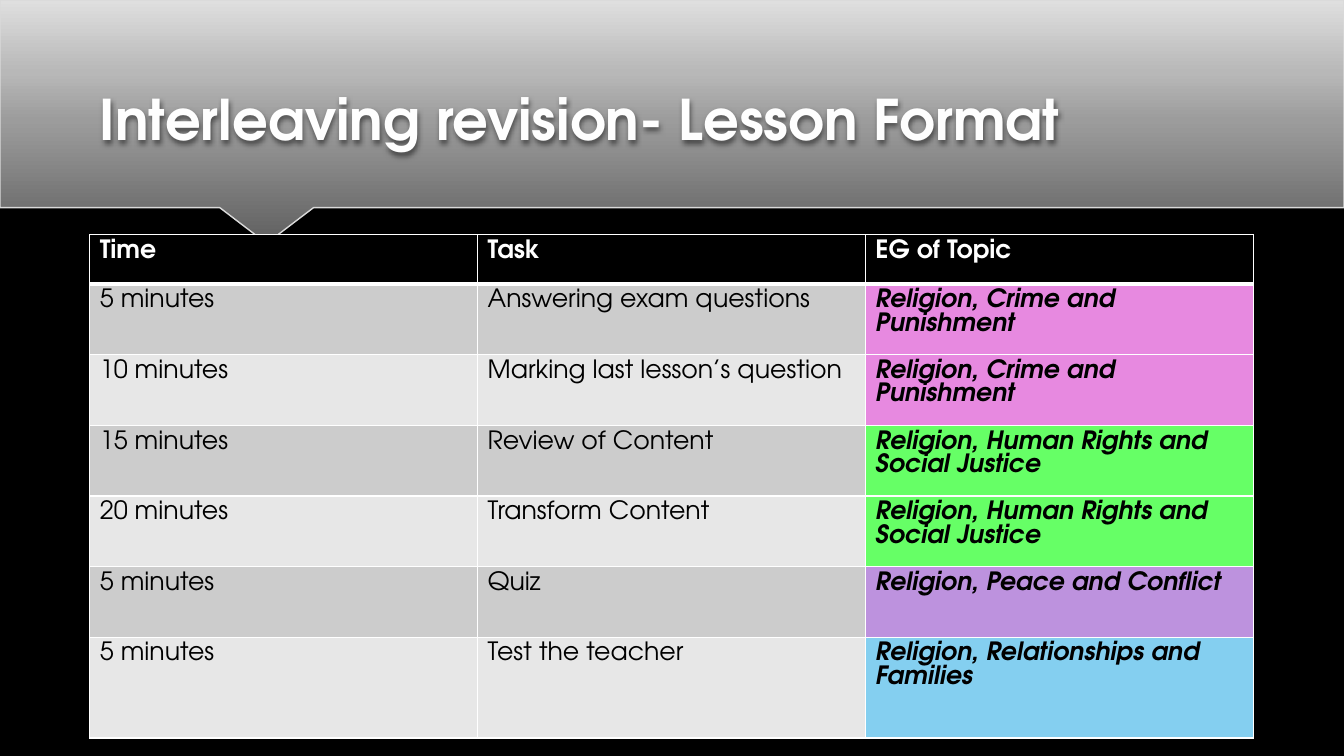
from lxml import etree
from pptx import Presentation
from pptx import util as u
from pptx.dml.color import RGBColor
from pptx.enum import text
from pptx.oxml.ns import qn

FONT = "TeX Gyre Adventor"
WIDTH, HEIGHT = 13.33, 7.5
HEADINGS = ("Time", "Task", "EG of Topic")
LESSON = [
    ("5 minutes", "Answering exam questions", "Religion, Crime and Punishment"),
    ("10 minutes", "Marking last lesson’s question", "Religion, Crime and Punishment"),
    ("15 minutes", "Review of Content", "Religion, Human Rights and Social Justice"),
    ("20 minutes", "Transform Content", "Religion, Human Rights and Social Justice"),
    ("5 minutes", "Quiz", "Religion, Peace and Conflict"),
    ("5 minutes", "Test the teacher", "Religion, Relationships and Families"),
]
TOPIC_FILLS = {
    "Religion, Crime and Punishment": "E789E0",
    "Religion, Human Rights and Social Justice": "66FF66",
    "Religion, Peace and Conflict": "BD92DE",
    "Religion, Relationships and Families": "84CFF0",
}
BANDS = ("CCCCCC", "E7E7E7")
ROW_HEIGHTS = (0.49, 0.7, 0.67, 0.7, 0.7, 0.7, 1)
BANNER_STOPS = ((0, "616161"), (50, "9C9C9C"), (70, "B8B8B8"), (100, "DFDFDF"))
BANNER_TIP = ((2.18, 0), (2.6, 0.32), (2.62, 0.33), (2.65, 0.33), (2.69, 0.32), (3.11, 0))


def paint(color_format, value):
    color_format.rgb = RGBColor.from_string(value)


def add_xml(parent, tag, **attributes):
    return etree.SubElement(parent, qn(tag), attributes)


def add_shadow(sp, blur, distance, opacity):
    effects = add_xml(sp._element.spPr, "a:effectLst")
    shadow = add_xml(effects, "a:outerShdw", blurRad=str(u.Pt(blur)),
                     dist=str(u.Pt(distance)), dir="5400000", rotWithShape="0")
    color = add_xml(shadow, "a:srgbClr", val="000000")
    add_xml(color, "a:alpha", val=str(opacity * 1000))


def set_font(p, size, color, bold, italic=False):
    p.font.name = FONT
    p.font.size = u.Pt(size)
    p.font.bold = bold
    p.font.italic = italic
    paint(p.font.color, color)


def set_borders(cell, **widths):
    tcPr = cell._tc.get_or_add_tcPr()
    for index, side in enumerate("LRTB"):
        line = etree.Element(qn(f"a:ln{side}"), w=str(u.Pt(widths.get(side, 1))))
        fill = add_xml(line, "a:solidFill")
        add_xml(fill, "a:srgbClr", val="FFFFFF")
        tcPr.insert(index, line)


def add_banner(s, left, top, width, height):
    outline = [(0, 0), (0, height)]
    outline += [(x, height + y) for x, y in BANNER_TIP]
    outline += [(width, height)]
    points = [(u.Inches(left + x), u.Inches(top + y)) for x, y in outline]
    builder = s.shapes.build_freeform(u.Inches(left + width), u.Inches(top))
    builder.add_line_segments(points, close=True)
    sp = builder.convert_to_shape()
    sp.fill.gradient()
    sp.fill.gradient_angle = 90
    stops = sp._element.spPr.find(qn("a:gradFill")).find(qn("a:gsLst"))
    for stop in list(stops):
        stops.remove(stop)
    for position, value in BANNER_STOPS:
        stop = add_xml(stops, "a:gs", pos=str(position * 1000))
        add_xml(stop, "a:srgbClr", val=value)
    paint(sp.line.color, "DADADA")
    sp.line.width = u.Pt(1)
    add_shadow(sp, 4, 3, 35)


def add_title(s, left, top, width, height):
    sp = s.shapes.add_textbox(*map(u.Inches, (left, top, width, height)))
    tf = sp.text_frame
    tf.word_wrap = True
    tf.vertical_anchor = text.MSO_ANCHOR.BOTTOM
    p = tf.paragraphs[0]
    p.text = "Interleaving revision- Lesson Format"
    set_font(p, 40, "FEFEFE", True)
    add_shadow(sp, 4, 2, 50)


def fill_cell(cell, wording, fill, color, bold, italic):
    cell.fill.solid()
    paint(cell.fill.fore_color, fill)
    p = cell.text_frame.paragraphs[0]
    p.text = wording
    set_font(p, 18, color, bold, italic)


def add_lesson_table(s, left, top, width):
    rows = [HEADINGS] + LESSON
    frame = s.shapes.add_table(len(rows), len(HEADINGS), u.Inches(left), u.Inches(top),
                               u.Inches(width), u.Inches(sum(ROW_HEIGHTS)))
    table = frame.table
    table.first_row = table.horz_banding = False
    for column in table.columns:
        column.width = u.Inches(width / len(HEADINGS))
    for i, (row, height) in enumerate(zip(rows, ROW_HEIGHTS)):
        table.rows[i].height = u.Inches(height)
        for j, wording in enumerate(row):
            cell = table.cell(i, j)
            header, topic = i == 0, i > 0 and j == 2
            fill = "000000" if header else TOPIC_FILLS.get(wording, BANDS[(i - 1) % 2])
            fill_cell(cell, wording, fill, "FFFFFF" if header else "000000",
                      header or topic, topic)
            set_borders(cell, T=3 if i == 1 else 1, B=3 if header else 1)


def main():
    prs = Presentation()
    prs.slide_width, prs.slide_height = u.Inches(WIDTH), u.Inches(HEIGHT)
    s = prs.slides.add_slide(prs.slide_layouts[6])
    s.background.fill.solid()
    paint(s.background.fill.fore_color, "000000")
    add_banner(s, 0, 0, WIDTH, 2.06)
    add_title(s, 0.89, 0.49, 11.56, 1.06)
    add_lesson_table(s, 0.89, 2.33, 11.54)
    prs.save("out.pptx")


if __name__ == "__main__":
    main()
